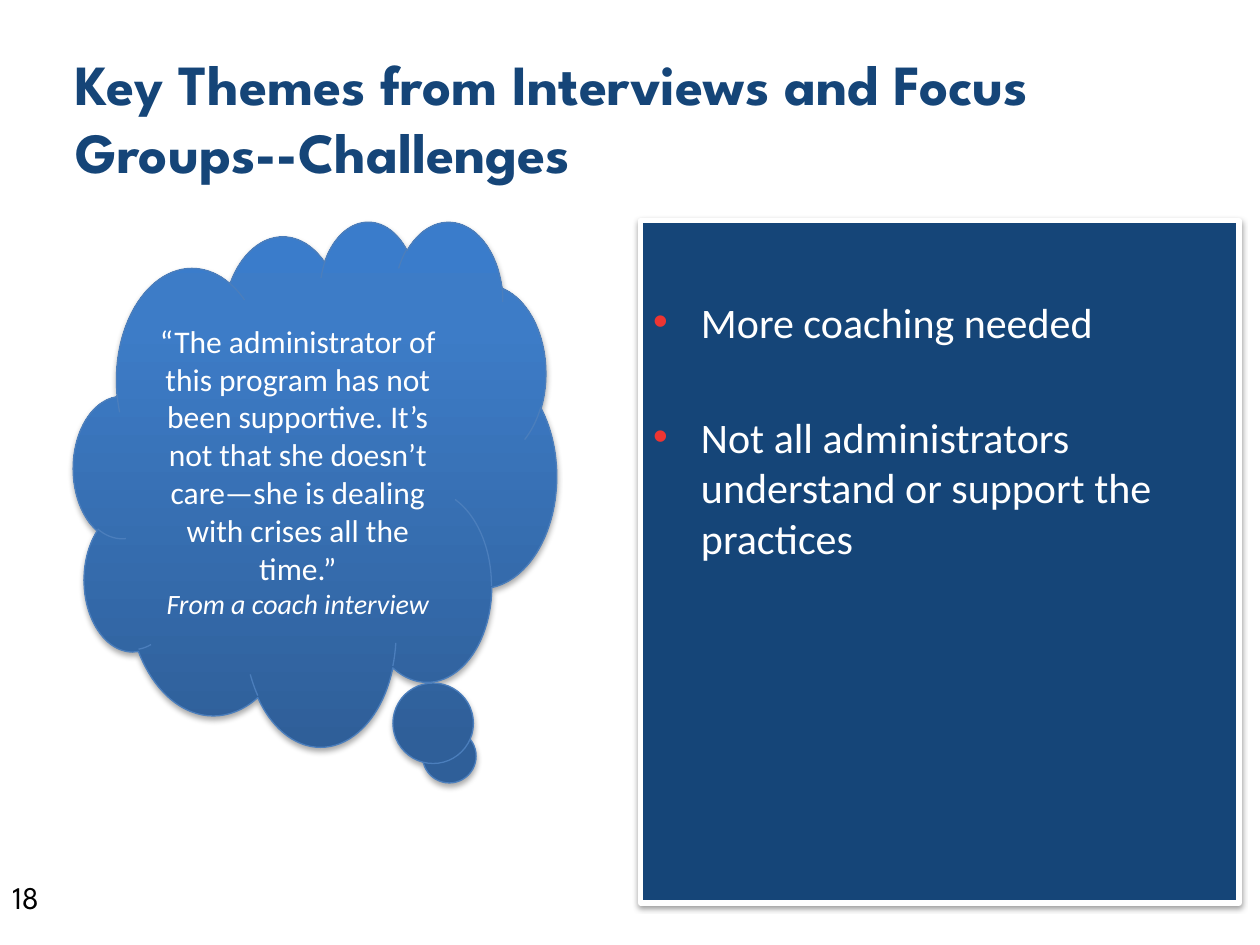
import copy

import pptx
import pptx.dml.color
import pptx.enum.shapes
import pptx.enum.text
import pptx.oxml
import pptx.oxml.ns
import pptx.util

COLORS = {
    "navy": "154578",
    "white": "FFFFFF",
    "black": "000000",
    "red": "ED3532",
    "edge": "4B7EBC",
    "cloud base": "2F5F99",
    "cloud middle": "3D7CC7",
    "cloud top": "3A7CCB",
}
CLOUD_STOPS = [(0, "cloud base"), (0.8, "cloud middle"), (1, "cloud top")]
COLUMNS, ROWS = 120, 90
INDENT = pptx.util.Inches(0.38)
ALIGN = pptx.enum.text.PP_ALIGN
ANCHOR = pptx.enum.text.MSO_ANCHOR
qn = pptx.oxml.ns.qn


def rgb(name):
    return pptx.dml.color.RGBColor.from_string(COLORS[name])


def element(tag, attributes="", content=""):
    namespace = pptx.oxml.ns.nsdecls("a")
    return pptx.oxml.parse_xml(f"<a:{tag} {namespace} {attributes}>{content}</a:{tag}>")


class SlideBuilder:
    def __init__(self):
        self.deck = pptx.Presentation()
        self.deck.slide_width = pptx.util.Inches(10)
        self.deck.slide_height = pptx.util.Inches(7.5)
        self.page = self.deck.slides.add_slide(self.deck.slide_layouts[1])
        self.heading, self.body = self.page.placeholders

    def grid(self, column, row, columns, rows):
        across = self.deck.slide_width / COLUMNS
        down = self.deck.slide_height / ROWS
        return [int(column * across), int(row * down), int(columns * across), int(rows * down)]

    def place(self, box, cell):
        for name, value in zip(("left", "top", "width", "height"), self.grid(*cell)):
            setattr(box, name, value)

    def frame(self, box, anchor):
        values = {
            "word_wrap": True,
            "auto_size": pptx.enum.text.MSO_AUTO_SIZE.NONE,
            "vertical_anchor": anchor,
        }
        for name, value in values.items():
            setattr(box.text_frame, name, value)
        return box.text_frame

    def add_text(self, para, text, font, size, color, align=ALIGN.LEFT, **styles):
        para.alignment = align
        span = para.add_run()
        span.text = text
        values = {"name": font, "size": pptx.util.Pt(size), **styles}
        for name, value in values.items():
            setattr(span.font, name, value)
        span.font.color.rgb = rgb(color)

    def outline(self, box, color, width):
        box.line.color.rgb = rgb(color)
        box.line.width = pptx.util.Pt(width)

    def cast_shadow(self, box, distance, opacity):
        box.shadow.inherit = False
        effects = box.element.spPr.find(qn("a:effectLst"))
        effects.append(element(
            "outerShdw",
            f'blurRad="{pptx.util.Pt(3.1)}" dist="{pptx.util.Pt(distance)}" '
            'dir="5400000" rotWithShape="0"',
            f'<a:srgbClr val="{COLORS["black"]}"><a:alpha val="{opacity * 1000}"/></a:srgbClr>',
        ))

    def title(self, cell, text):
        self.place(self.heading, cell)
        frame = self.frame(self.heading, ANCHOR.MIDDLE)
        self.add_text(frame.paragraphs[0], text, "League Spartan", 32.4, "navy", bold=True)

    def bullet(self, para):
        properties = para._p.get_or_add_pPr()
        properties.set("marL", str(INDENT))
        properties.set("indent", str(-INDENT))
        properties.append(element("buClr", content=f'<a:srgbClr val="{COLORS["red"]}"/>'))
        properties.append(element("buFont", 'typeface="Arial"'))
        properties.append(element("buChar", 'char="•"'))

    def bullet_panel(self, cell, items):
        self.place(self.body, cell)
        self.body.fill.solid()
        self.body.fill.fore_color.rgb = rgb("navy")
        self.outline(self.body, "white", 3)
        self.cast_shadow(self.body, 1.6, 38)
        frame = self.frame(self.body, ANCHOR.TOP)
        frame.margin_top = pptx.util.Inches(0.6)
        for index, item in enumerate(items):
            para = frame.add_paragraph() if index else frame.paragraphs[0]
            self.bullet(para)
            para.space_before = pptx.util.Pt(37 if index else 0)
            self.add_text(para, item, "Calibri", 24, "white")

    def page_number(self, cell, text):
        box = self.page.shapes.add_textbox(*self.grid(*cell))
        frame = self.frame(box, ANCHOR.TOP)
        self.add_text(frame.paragraphs[0], text, "League Spartan", 18, "black")

    def thought_cloud(self, cell, quote, speaker):
        kind = pptx.enum.shapes.MSO_SHAPE.CLOUD_CALLOUT
        cloud = self.page.shapes.add_shape(kind, *self.grid(*cell))
        cloud.adjustments[0], cloud.adjustments[1] = 0.287, 0.537
        cloud.fill.gradient()
        cloud.fill.gradient_angle = 90
        stops = cloud.element.spPr.find(qn("a:gradFill")).find(qn("a:gsLst"))
        stops.append(copy.deepcopy(stops[-1]))
        for stop, (position, color) in zip(cloud.fill.gradient_stops, CLOUD_STOPS):
            stop.position = position
            stop.color.rgb = rgb(color)
        self.outline(cloud, "edge", 0.75)
        self.cast_shadow(cloud, 1.8, 35)
        frame = self.frame(cloud, ANCHOR.MIDDLE)
        self.add_text(frame.paragraphs[0], quote, "Calibri", 18, "white", ALIGN.CENTER)
        self.add_text(frame.add_paragraph(), speaker, "Calibri", 16, "white", ALIGN.CENTER, italic=True)


def main():
    builder = SlideBuilder()
    builder.title((6, 3.6, 108, 15), "Key Themes from Interviews and Focus Groups--Challenges")
    builder.bullet_panel((61, 21, 57, 65), [
        "More coaching needed",
        "Not all administrators understand or support the practices",
    ])
    builder.page_number((0, 83, 28, 4.8), "18")
    builder.thought_cloud(
        (7, 21, 46, 50),
        "“The administrator of this program has not been supportive. It’s not that "
        "she doesn’t care—she is dealing with crises all the time.”",
        "From a coach interview",
    )
    builder.deck.save("out.pptx")


if __name__ == "__main__":
    main()
